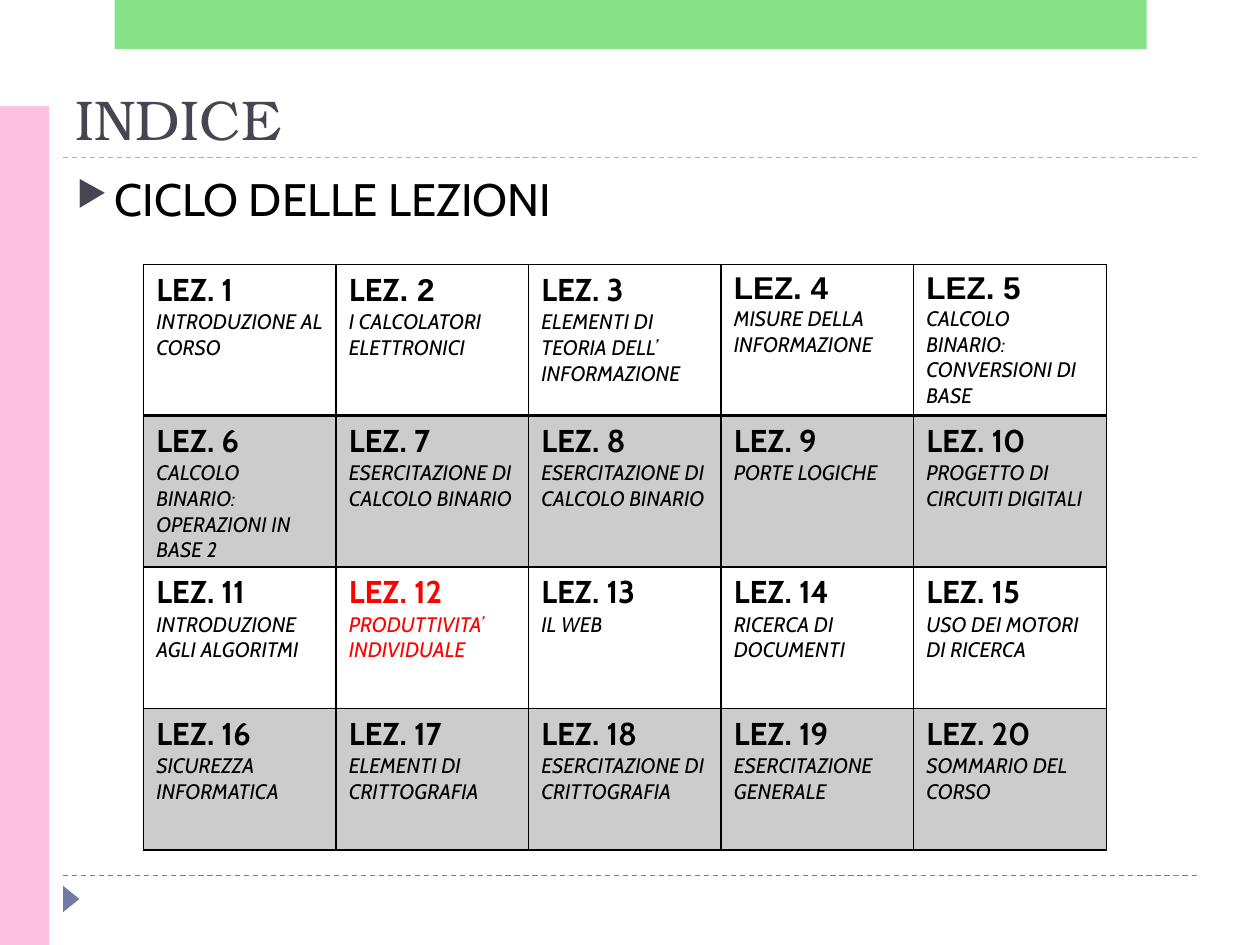
"""Build the course index slide with its table of twenty lessons."""
import dataclasses
import typing

import lxml.etree
import pptx
import pptx.dml.color
import pptx.enum.dml
import pptx.enum.shapes
import pptx.enum.text
import pptx.oxml.ns
import pptx.util

RGB = pptx.dml.color.RGBColor
BLACK = RGB(0, 0, 0)
RED = RGB(0xFF, 0, 0)
PINK = RGB(0xFF, 0xC1, 0xE0)
GREEN = RGB(0x62, 0xD8, 0x62)
SLATE = RGB(0x46, 0x46, 0x53)
BLUE = RGB(0x72, 0x7C, 0xA3)
PALE = RGB(0x9F, 0xB8, 0xCD)

SHAPE = pptx.enum.shapes.MSO_SHAPE
ANCHOR = pptx.enum.text.MSO_ANCHOR
WIDTH, HEIGHT = pptx.util.Inches(10), pptx.util.Inches(7.5)
COLS, ROWS = 100, 75
ACROSS = 5
SANS = "Cabin"


@dataclasses.dataclass
class Box:
    """Place and size in grid columns and rows."""
    left: float
    top: float
    width: float
    height: float

    def span(self) -> tuple[int, int, int, int]:
        """Give the box in slide units."""
        return (col(self.left), row(self.top), col(self.width), row(self.height))


@dataclasses.dataclass
class Block:
    """A plain filled shape."""
    kind: SHAPE
    box: Box
    color: RGB
    share: int = 100
    turn: int = 0


@dataclasses.dataclass
class Rule:
    """A dashed line across the slide."""
    level: float
    color: RGB


@dataclasses.dataclass
class Lesson:
    """A lesson's topic, its colour and the end of the sans part of its head."""
    topic: str
    color: RGB = BLACK
    cut: typing.Optional[int] = None


BLOCKS = [
    Block(SHAPE.ISOSCELES_TRIANGLE, Box(4.6, 70.7, 2.1, 1.3), BLUE, turn=90),
    Block(SHAPE.RECTANGLE, Box(0, 8.4, 3.9, 66.6), PINK),
    Block(SHAPE.RECTANGLE, Box(9.1, 0, 81.9, 3.9), GREEN, share=76),
]
RULES = [Rule(69.5, BLUE), Rule(12.5, PALE)]
LESSONS = [
    Lesson("INTRODUZIONE AL CORSO"),
    Lesson("I CALCOLATORI \nELETTRONICI", cut=3),
    Lesson("ELEMENTI DI TEORIA DELL’\nINFORMAZIONE"),
    Lesson("MISURE DELLA INFORMAZIONE", cut=0),
    Lesson("CALCOLO BINARIO: CONVERSIONI DI BASE", cut=0),
    Lesson("CALCOLO BINARIO: OPERAZIONI IN BASE 2"),
    Lesson("ESERCITAZIONE DI CALCOLO BINARIO"),
    Lesson("ESERCITAZIONE DI CALCOLO BINARIO"),
    Lesson("PORTE LOGICHE"),
    Lesson("PROGETTO DI CIRCUITI DIGITALI"),
    Lesson("INTRODUZIONE AGLI ALGORITMI"),
    Lesson("PRODUTTIVITA’ INDIVIDUALE", color=RED),
    Lesson("IL WEB"),
    Lesson("RICERCA DI DOCUMENTI"),
    Lesson("USO DEI MOTORI DI RICERCA"),
    Lesson("SICUREZZA INFORMATICA"),
    Lesson("ELEMENTI DI CRITTOGRAFIA"),
    Lesson("ESERCITAZIONE DI CRITTOGRAFIA"),
    Lesson("ESERCITAZIONE GENERALE"),
    Lesson("SOMMARIO DEL CORSO"),
]
HEAD = {"size": pptx.util.Pt(18), "bold": True, "italic": False}
BODY = {"size": pptx.util.Pt(12), "bold": False, "italic": True, "name": SANS}
TITLE = {"size": pptx.util.Pt(32), "name": "TeX Gyre Bonum"}
CYCLE = {"size": pptx.util.Pt(26), "name": SANS}


def col(count: float) -> int:
    """Turn grid columns into a length."""
    return round(WIDTH * count / COLS)


def row(count: float) -> int:
    """Turn grid rows into a length."""
    return round(HEIGHT * count / ROWS)


def add(parent, tag: str, **marks: str):
    """Append a drawing element."""
    return lxml.etree.SubElement(parent, pptx.oxml.ns.qn(tag), marks)


def style(part, color: RGB, form: dict) -> None:
    """Set the font of a run or paragraph."""
    for key, value in form.items():
        setattr(part.font, key, value)
    part.font.color.rgb = color


def paint(fill, root, color: RGB, share: int) -> None:
    """Fill with a colour of the given opacity."""
    fill.solid()
    fill.fore_color.rgb = color
    if share < 100:
        tone = root.find(".//" + pptx.oxml.ns.qn("a:solidFill") + "[last()]")[0]
        add(tone, "a:alpha", val=str(share * 1000))


def draw_block(slide, block: Block) -> None:
    """Draw a filled shape."""
    shape = slide.shapes.add_shape(block.kind, *block.box.span())
    shape.shadow.inherit = False
    shape.rotation = block.turn
    paint(shape.fill, shape.element.spPr, block.color, block.share)
    shape.line.fill.background()


def draw_rule(slide, rule: Rule) -> None:
    """Draw a dashed line."""
    kind = pptx.enum.shapes.MSO_CONNECTOR.STRAIGHT
    level = row(rule.level)
    line = slide.shapes.add_connector(kind, col(5), level, col(95), level)
    line.line.color.rgb = rule.color
    line.line.width = pptx.util.Pt(0.75)
    line.line.dash_style = pptx.enum.dml.MSO_LINE.DASH
    add(line.element.spPr, "a:effectLst")


def draw_text(slide, box: Box, text: str, color: RGB, form: dict,
              anchor: ANCHOR = ANCHOR.TOP, mark: str = "") -> None:
    """Draw a line of text with an optional bullet."""
    frame = slide.shapes.add_textbox(*box.span()).text_frame
    frame.word_wrap = True
    frame.vertical_anchor = anchor
    para = frame.paragraphs[0]
    if mark:
        props = para._p.get_or_add_pPr()
        props.set("marL", str(col(3)))
        props.set("indent", str(-col(3)))
        add(add(props, "a:buClr"), "a:srgbClr", val=str(SLATE))
        add(props, "a:buSzPct", val="76000")
        add(props, "a:buChar", char=mark)
    run = para.add_run()
    run.text = text
    style(run, color, form)


def edge(cell, level: int) -> None:
    """Draw the cell's borders, heavy below the first row."""
    props = cell._tc.get_or_add_tcPr()
    heavy = {0: "a:lnB", 1: "a:lnT"}.get(level)
    for tag in ("a:lnL", "a:lnR", "a:lnT", "a:lnB"):
        size = pptx.util.Pt(2 if tag == heavy else 1)
        line = add(props, tag, w=str(size))
        add(add(line, "a:solidFill"), "a:srgbClr", val=str(BLACK))


def write(cell, number: int, item: Lesson) -> None:
    """Write a lesson's head and topic."""
    text = f"LEZ. {number}"
    cut = len(text) if item.cut is None else item.cut
    para = cell.text_frame.paragraphs[0]
    for piece, name in ((text[:cut], SANS), (text[cut:], "Arial")):
        if piece:
            run = para.add_run()
            run.text = piece
            style(run, item.color, HEAD | {"name": name})
    para = cell.text_frame.add_paragraph()
    para.text = item.topic
    for run in para.runs:
        style(run, item.color, BODY)


def draw_table(slide, box: Box) -> None:
    """Draw the table of lessons."""
    down = len(LESSONS) // ACROSS
    table = slide.shapes.add_table(down, ACROSS, *box.span()).table
    table.first_row = table.horz_banding = False
    for index, item in enumerate(LESSONS):
        level, place = divmod(index, ACROSS)
        cell = table.cell(level, place)
        edge(cell, level)
        if level % 2:
            paint(cell.fill, cell._tc.tcPr.getparent(), BLACK, 100)
            add(cell._tc.tcPr.find(pptx.oxml.ns.qn("a:solidFill"))[0], "a:alpha", val="20000")
        else:
            cell.fill.background()
        write(cell, index + 1, item)


deck = pptx.Presentation()
deck.slide_width, deck.slide_height = WIDTH, HEIGHT
page = deck.slides.add_slide(deck.slide_layouts[6])
for rule in RULES:
    draw_rule(page, rule)
for block in BLOCKS:
    draw_block(page, block)
draw_text(page, Box(5, 5.5, 90, 7), "INDICE", SLATE, TITLE, anchor=ANCHOR.BOTTOM)
draw_text(page, Box(5.1, 13.1, 90, 7.9), "CICLO DELLE LEZIONI", BLACK, CYCLE, mark="▶")
draw_table(page, Box(11.4, 21, 76.4, 44.9))
deck.save("out.pptx")
